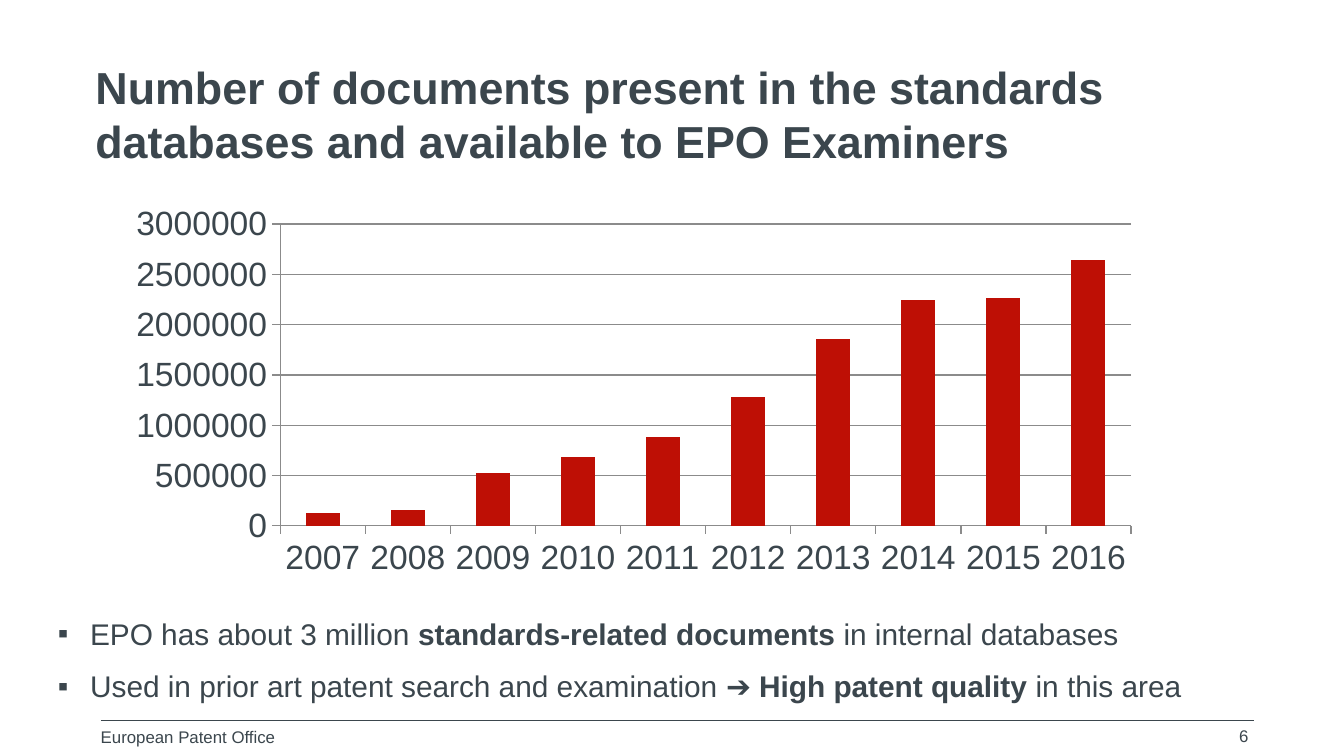
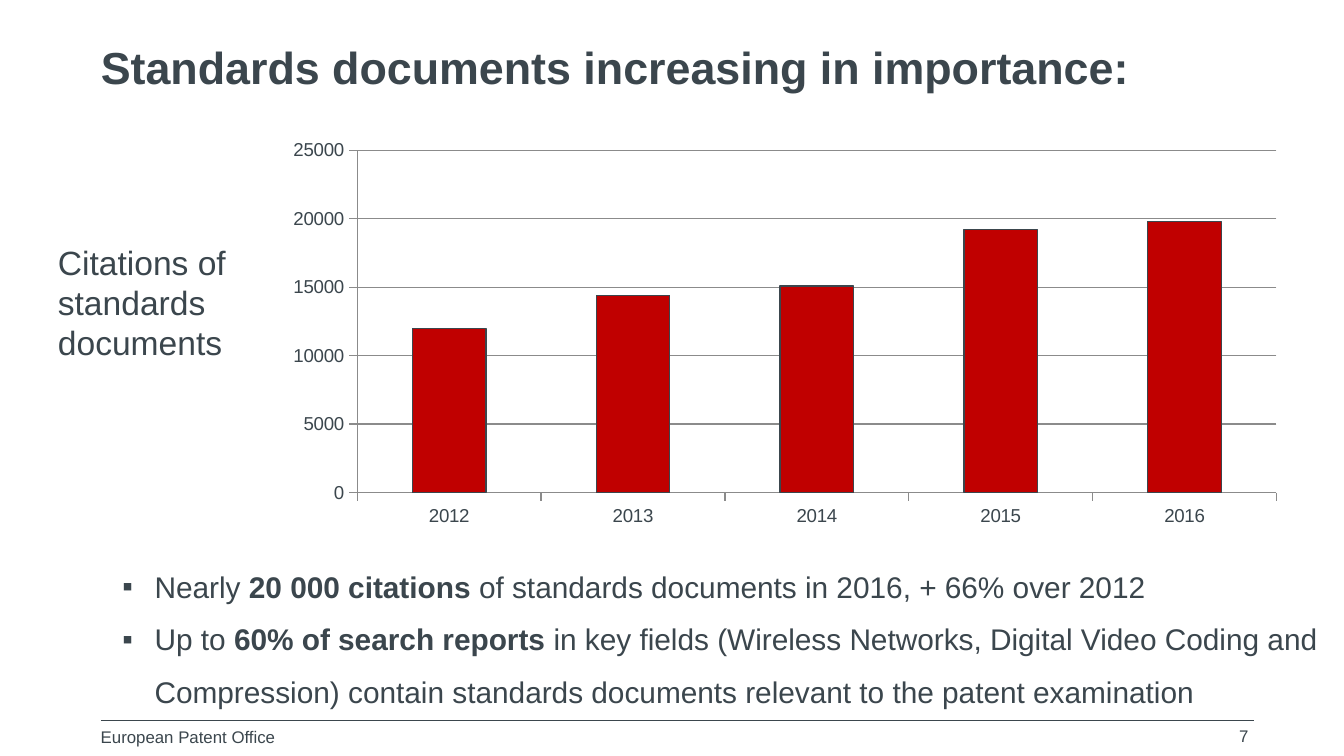
from lxml.etree import SubElement
from pptx import Presentation
from pptx.chart.data import CategoryChartData as ChartData
from pptx.dml.color import RGBColor
from pptx.enum.chart import XL_CHART_TYPE as ChartType, XL_TICK_MARK as TickMark
from pptx.enum.shapes import MSO_CONNECTOR as Connector
from pptx.enum.text import PP_ALIGN as Align
from pptx.oxml.ns import qn
from pptx.util import Pt

COLORS = {"text": "3B464D", "axis": "8B8B8B", "brick": "BE0F05", "red": "C00000", "white": "FFFFFF"}
FONT = "Arial"
BULLET_INDENT = 17.3


def color(name):
    return RGBColor.from_string(COLORS[name])


def write(para, text, size=16, bold=False, spacing=None, align=None):
    para.alignment = align
    if spacing:
        para.line_spacing = Pt(spacing)
    span = para.add_run()
    span.text = text
    span.font.name = FONT
    span.font.size = Pt(size)
    span.font.bold = bold
    span.font.color.rgb = color("text")


def add_bullet(para):
    props = para._p.get_or_add_pPr()
    props.set("marL", str(Pt(BULLET_INDENT)))
    props.set("indent", str(-Pt(BULLET_INDENT)))
    SubElement(props, qn("a:buFont"), typeface=FONT)
    SubElement(props, qn("a:buChar"), char="▪")


class SlideWriter:
    def __init__(self):
        self.deck = Presentation()
        self.deck.slide_width, self.deck.slide_height = Pt(720), Pt(405)
        self.page = None

    def start(self, number):
        self.page = self.deck.slides.add_slide(self.deck.slide_layouts[6])
        fill = self.page.background.fill
        fill.solid()
        fill.fore_color.rgb = color("white")
        self.rule(54, 386, 671.8)
        self.text("European Patent Office", 54, 389.5, 122.4, 13.7, size=9)
        self.text(str(number), 527, 388.8, 141.8, 13, size=9, align=Align.RIGHT)

    def rule(self, left, top, right):
        line = self.page.shapes.add_connector(Connector.STRAIGHT, Pt(left), Pt(top), Pt(right), Pt(top))
        line.line.color.rgb = color("text")
        line.line.width = Pt(0.75)
        SubElement(line._element.spPr, qn("a:effectLst"))

    def frame(self, left, top, width, height):
        box = self.page.shapes.add_textbox(Pt(left), Pt(top), Pt(width), Pt(height))
        frame = box.text_frame
        frame.word_wrap = True
        frame.margin_left = frame.margin_right = frame.margin_top = frame.margin_bottom = 0
        return frame

    def text(self, text, left, top, width, height, **style):
        write(self.frame(left, top, width, height).paragraphs[0], text, **style)

    def title(self, text, left, top, height):
        self.text(text, left, top, 617.8, height, size=24, bold=True, spacing=29)

    def bullets(self, items, left, top, width, height):
        frame = self.frame(left, top, width, height)
        for index, spans in enumerate(items):
            para = frame.add_paragraph() if index else frame.paragraphs[0]
            for position, text in enumerate(spans):
                write(para, text, bold=position == 1, spacing=28)
            add_bullet(para)

    def columns(self, values, first_year, left, top, width, height, size, fill, maximum, step, outline=False):
        data = ChartData()
        data.categories = [str(first_year + offset) for offset in range(len(values))]
        data.add_series("Series 1", values)
        chart = self.page.shapes.add_chart(
            ChartType.COLUMN_CLUSTERED, Pt(left), Pt(top), Pt(width), Pt(height), data).chart
        chart.has_legend = chart.has_title = False
        chart.font.name = FONT
        chart.font.size = Pt(size)
        chart.font.color.rgb = color("text")
        scale = chart.value_axis
        scale.minimum_scale, scale.maximum_scale, scale.major_unit = 0, maximum, step
        scale.has_major_gridlines = True
        for axis in (chart.category_axis, scale):
            axis.major_tick_mark = TickMark.OUTSIDE
            axis.minor_tick_mark = TickMark.NONE
        for line in (chart.category_axis.format.line, scale.format.line, scale.major_gridlines.format.line):
            line.color.rgb = color("axis")
            line.width = Pt(0.75)
        plot = chart.plots[0]
        plot.gap_width = 150
        plot.vary_by_categories = False
        bars = plot.series[0].format
        bars.fill.solid()
        bars.fill.fore_color.rgb = color(fill)
        if outline:
            bars.line.color.rgb = color("text")
            bars.line.width = Pt(0.75)
        else:
            bars.line.fill.background()


def add_database_slide(writer):
    writer.start(6)
    writer.title("Number of documents present in the standards databases and available to EPO Examiners",
                 51.1, 31.7, 58)
    writer.columns(
        [130000, 160000, 520000, 680000, 880000, 1280000, 1860000, 2240000, 2260000, 2640000],
        2007, 61.9, 105.8, 555.1, 207.4, size=18, fill="brick", maximum=3000000, step=500000)
    writer.bullets([
        ("EPO has about 3 million ", "standards-related documents ", "in internal databases"),
        ("Used in prior art patent search and examination ➔ ", "High patent quality ", "in this area"),
    ], 31, 321.1, 683.3, 69.8)


def add_citation_slide(writer):
    writer.start(7)
    writer.title("Standards documents increasing in importance:", 54, 20.9, 31.7)
    writer.columns([12000, 14400, 15100, 19200, 19800], 2012, 146.2, 70.6, 548.6, 216,
                   size=10, fill="red", maximum=25000, step=5000, outline=True)
    writer.text("Citations of standards documents", 31, 129.6, 126, 65.5, size=18, spacing=21.5)
    writer.bullets([
        ("Nearly ", "20 000 citations", " of standards documents in 2016, + 66% over 2012"),
        ("Up to ", "60% of search reports ",
         "in key fields (Wireless Networks, Digital Video Coding and Compression) "
         "contain standards documents relevant to the patent examination"),
    ], 65.5, 295.9, 646.6, 89.3)


def main():
    writer = SlideWriter()
    add_database_slide(writer)
    add_citation_slide(writer)
    writer.deck.save("out.pptx")


if __name__ == "__main__":
    main()
